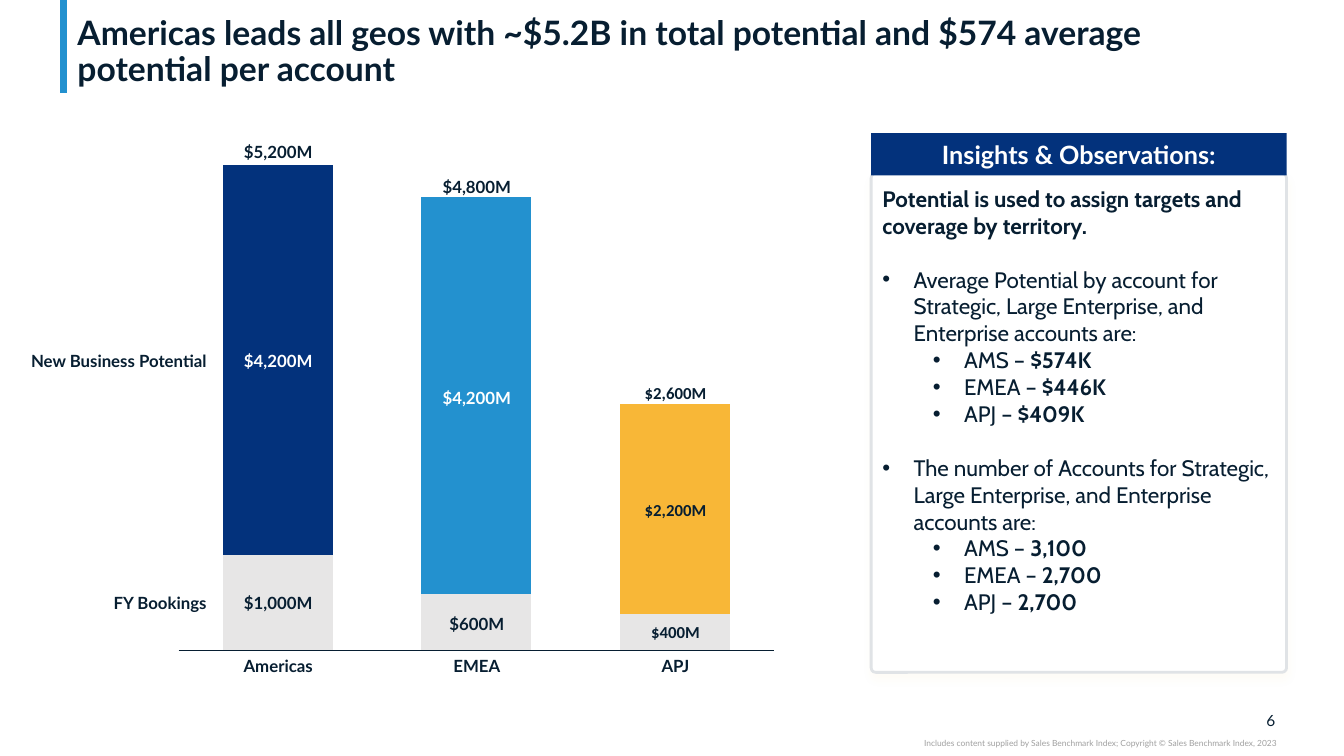
from lxml import etree
from pptx import Presentation
from pptx import util as u
from pptx.chart import data as chart_data
from pptx.dml import color
from pptx.enum import chart as charts, shapes, text
from pptx.oxml import parse_xml
from pptx.oxml import ns

COLORS = {
    "ink": "071E31", "navy": "03327C", "blue": "2391CF", "gold": "F8B737",
    "bookings": "E7E6E6", "border": "E0E3E6", "credit": "A0A0A0", "white": "FFFFFF",
}
RGB = {name: color.RGBColor.from_string(value) for name, value in COLORS.items()}
ALIGN, ANCHOR = text.PP_ALIGN, text.MSO_ANCHOR


def write(para, words, size=12, bold=True, font="Lato", tint="ink"):
    span = para.add_run()
    span.text = words
    span.font.size = u.Pt(size)
    span.font.bold = bold
    span.font.name = font
    span.font.color.rgb = RGB[tint]


def add_text(words, left, top, width, height, align=ALIGN.CENTER, anchor=ANCHOR.MIDDLE,
             inset=0, wrap=False, spacing=None, **style):
    box = page.shapes.add_textbox(*map(u.Inches, (left, top, width, height)))
    frame = box.text_frame
    frame.word_wrap = wrap
    frame.vertical_anchor = anchor
    frame.margin_left = frame.margin_right = u.Inches(inset)
    frame.margin_top = frame.margin_bottom = 0
    para = frame.paragraphs[0]
    para.alignment = align
    para.line_spacing = spacing
    write(para, words, **style)


deck = Presentation()
deck.slide_width, deck.slide_height = u.Inches(13.33), u.Inches(7.5)
page = deck.slides.add_slide(deck.slide_layouts[6])

# Title with accent bar
accent = page.shapes.add_connector(shapes.MSO_CONNECTOR.STRAIGHT, u.Inches(0.63), 0,
                                   u.Inches(0.63), u.Inches(0.92))
accent.line.color.rgb = RGB["blue"]
accent.line.width = u.Pt(5)
etree.SubElement(accent._element.spPr, ns.qn("a:effectLst"))
add_text("Americas leads all geos with ~$5.2B in total potential and $574 average "
         "potential per account", 0.67, 0.04, 11.99, 0.84, align=ALIGN.LEFT,
         anchor=ANCHOR.BOTTOM, inset=0.1, wrap=True, spacing=0.9, size=24)

# Footer
add_text("6", 12.32, 7.05, 0.33, 0.19, align=ALIGN.RIGHT, wrap=True, size=11, bold=False)
add_text("Includes content supplied by Sales Benchmark Index; "
         "Copyright © Sales Benchmark Index, 2023", 7.5, 7.32, 5.16, 0.1,
         align=ALIGN.RIGHT, anchor=ANCHOR.TOP, wrap=True, size=6, bold=False, tint="credit")

# Stacked columns
values = chart_data.CategoryChartData()
values.categories = ["1", "2", "3"]
values.add_series("Series 1", (24, 14, 9))
values.add_series("Series 2", (98, 100, 53))
chart = page.shapes.add_chart(
    charts.XL_CHART_TYPE.COLUMN_STACKED, u.Inches(1.68), u.Inches(1.55),
    u.Inches(6.09), u.Inches(4.99), values).chart
chart.has_legend = False
chart.has_title = False
chart.font.size = u.Pt(10)
chart.font.name = "Lato"
chart.font.color.rgb = RGB["ink"]

plot = chart.plots[0]
plot.gap_width, plot.overlap = 80, 100
plot.vary_by_categories = False
bookings, potential = plot.series
for series, tint in ((bookings, "bookings"), (potential, "navy")):
    series.format.fill.solid()
    series.format.fill.fore_color.rgb = RGB[tint]
for index, tint in ((1, "blue"), (2, "gold")):
    fill = potential.points[index].format.fill
    fill.solid()
    fill.fore_color.rgb = RGB[tint]

category_axis, value_axis = chart.category_axis, chart.value_axis
category_axis.tick_label_position = charts.XL_TICK_LABEL_POSITION.NONE
category_axis.major_tick_mark = charts.XL_TICK_MARK.NONE
category_axis.format.line.color.rgb = RGB["ink"]
category_axis.format.line.width = u.Pt(0.75)
value_axis.visible = False
value_axis.has_major_gridlines = False
value_axis.minimum_scale, value_axis.maximum_scale = 0, 122

# Fixed plot area inside the chart
plot_area = chart._chartSpace.chart.plotArea
for layout in plot_area.findall(ns.qn("c:layout")):
    plot_area.remove(layout)
plot_area.insert(0, parse_xml(
    f'<c:layout {ns.nsdecls("c")}><c:manualLayout><c:layoutTarget val="inner"/>'
    '<c:xMode val="edge"/><c:yMode val="edge"/><c:x val="0.015"/><c:y val="0.018"/>'
    '<c:w val="0.97"/><c:h val="0.964"/></c:manualLayout></c:layout>'))

# Column labels: total, potential and bookings, each with its top
columns = [
    ("Americas", "white", {}, ("$5,200M", 1.41), ("$4,200M", 3.48), ("$1,000M", 5.88)),
    ("EMEA", "white", {}, ("$4,800M", 1.75), ("$4,200M", 3.85), ("$600M", 6.09)),
    ("APJ", "ink", {"font": "Calibri", "spacing": 0.9},
     ("$2,600M", 3.82), ("$2,200M", 4.98), ("$400M", 6.19)),
]
for index, (geo, tint, style, total, new, booked) in enumerate(columns):
    left = 2.36 + 1.97 * index
    height = 0.18 if style else 0.2
    add_text(geo, left, 6.51, 0.8, 0.2, anchor=ANCHOR.TOP)
    for (words, top), shade, anchor in ((total, "ink", ANCHOR.BOTTOM),
                                        (new, tint, ANCHOR.MIDDLE),
                                        (booked, "ink", ANCHOR.MIDDLE)):
        add_text(words, left, top, 0.8, height, anchor=anchor, inset=0.02, tint=shade, **style)

# Row labels
for words, top in (("New Business Potential", 3.48), ("FY Bookings", 5.88)):
    add_text(words, 0.17, top, 1.88, 0.2, align=ALIGN.RIGHT)

# Insights panel
group = page.shapes.add_group_shape()
panel = group.shapes.add_shape(shapes.MSO_SHAPE.ROUNDED_RECTANGLE, u.Inches(8.64),
                               u.Inches(1.72), u.Inches(4.12), u.Inches(4.95))
panel.adjustments[0] = 0.011
panel.fill.solid()
panel.fill.fore_color.rgb = RGB["white"]
panel.line.color.rgb = RGB["border"]
panel.line.width = u.Pt(2)
panel._element.spPr.append(parse_xml(
    f'<a:effectLst {ns.nsdecls("a")}><a:outerShdw blurRad="{u.Pt(6)}" dist="{u.Pt(4)}" '
    f'dir="5400000" algn="t" rotWithShape="0"><a:srgbClr val="{COLORS["gold"]}">'
    '<a:alpha val="4000"/></a:srgbClr></a:outerShdw></a:effectLst>'))
frame = panel.text_frame
frame.word_wrap = True
frame.vertical_anchor = ANCHOR.TOP
frame.margin_left = frame.margin_right = u.Inches(0.1)
frame.margin_top = frame.margin_bottom = u.Inches(0.1)
lead = frame.paragraphs[0]
lead.alignment = ALIGN.LEFT
write(lead, "Potential is used to assign targets and coverage by territory.",
      size=16, font="Cabin")

insights = [
    ("Average Potential by account for Strategic, Large Enterprise, and Enterprise "
     "accounts are:", ("$574K", "$446K", "$409K")),
    ("The number of Accounts for Strategic, Large Enterprise, and Enterprise "
     "accounts are:", ("3,100", "2,700", "2,700")),
]
for statement, figures in insights:
    rows = [(0, statement, "")]
    rows += [(1, f"{geo} – ", figure) for geo, figure in zip(("AMS", "EMEA", "APJ"), figures)]
    for level, words, figure in rows:
        para = frame.add_paragraph()
        para.level = level
        para.alignment = ALIGN.LEFT
        para.space_before = u.Pt(0 if level else 19.4)
        properties = para._p.get_or_add_pPr()
        properties.set("marL", str(u.Inches(0.31 + 0.5 * level)))
        properties.set("indent", str(u.Inches(-0.31)))
        etree.SubElement(properties, ns.qn("a:buFont"), typeface="Arial")
        etree.SubElement(properties, ns.qn("a:buChar"), char="•")
        write(para, words, size=16, bold=False, font="Cabin")
        if figure:
            write(para, figure, size=16, font="Cabin")

# Panel heading
heading = group.shapes.add_shape(shapes.MSO_SHAPE.RECTANGLE, u.Inches(8.64), u.Inches(1.32),
                                 u.Inches(4.12), u.Inches(0.42))
heading.shadow.inherit = False
heading.fill.solid()
heading.fill.fore_color.rgb = RGB["navy"]
heading.line.fill.background()
heading.text_frame.word_wrap = True
heading.text_frame.vertical_anchor = ANCHOR.MIDDLE
title = heading.text_frame.paragraphs[0]
title.alignment = ALIGN.CENTER
write(title, "Insights & Observations:", size=18, tint="white")

deck.save("out.pptx")
